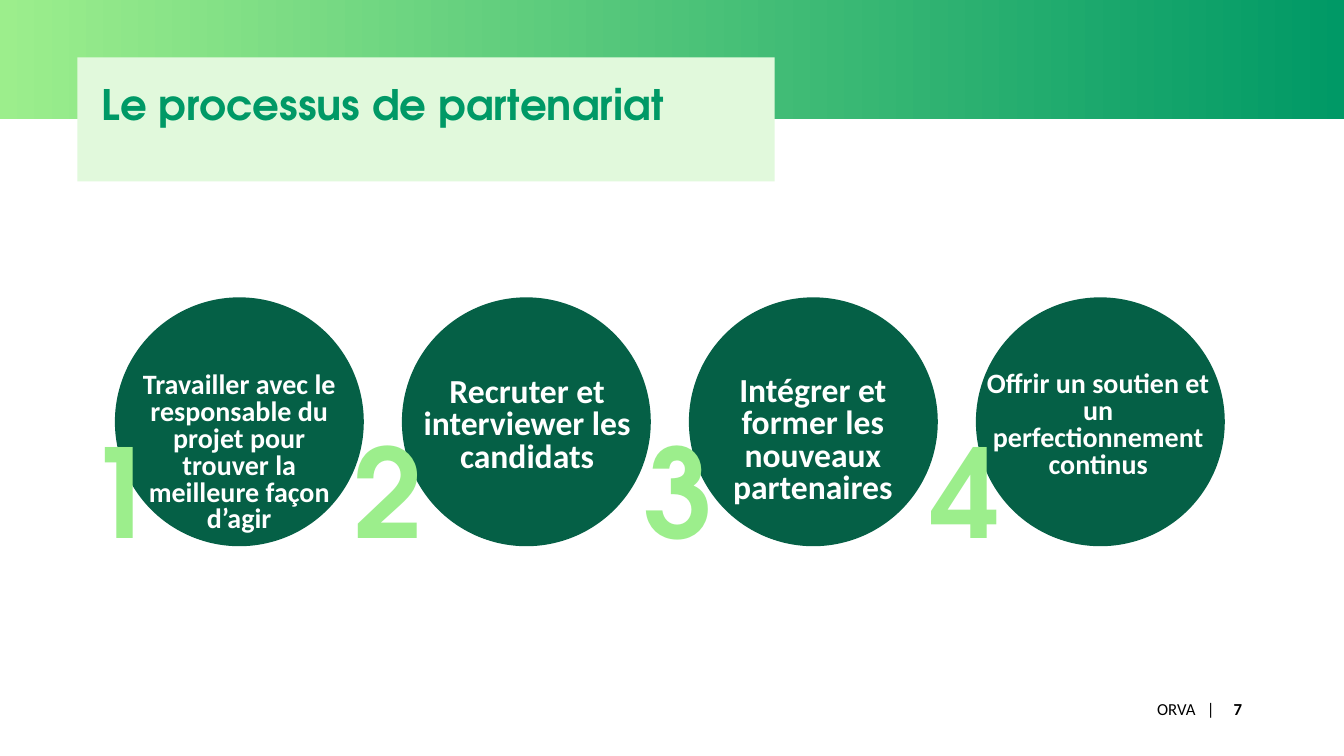
"""Build the slide showing the four steps of the partnership process."""
from pptx import Presentation
from pptx.dml.color import RGBColor
from pptx.enum import shapes, text
from pptx.util import Pt

TITLE = "Le processus de partenariat"
FOOTER = "ORVA   |"
PAGE = "7"
HEADING_FONT, BODY_FONT = "TeX Gyre Adventor", "Calibri"
GREEN, LIME, PALE, DARK = "009966", "9CEE8C", "E1F9DC", "056046"
WHITE, BLACK = "FFFFFF", "000000"

# label, size, number offset, label offset, label top, label width, label height
STEPS = [
    ("Travailler avec le responsable du projet pour trouver la meilleure façon d’agir",
     20, -27.4, 7.1, 262.8, 163.4, 123.8),
    ("Recruter et interviewer les candidats",
     24, -41.7, 0.1, 266.4, 178.6, 77),
    ("Intégrer et former les nouveaux partenaires",
     24, -39, -0.8, 265.7, 178.6, 100),
    ("Offrir un soutien et un perfectionnement continus",
     20, -39, -2, 262.1, 178.6, 85),
]
SLIDE_WIDTH, SLIDE_HEIGHT = 960, 540
CIRCLE_LEFT, CIRCLE_TOP, CIRCLE_SIZE, CIRCLE_PITCH = 82.1, 212.4, 177.8, 205
NUMBER_TOP, NUMBER_WIDTH, NUMBER_HEIGHT = 293, 82.8, 113.8


def colour(value):
    return RGBColor.from_string(value)


def add_block(slide, kind, box, fill=None):
    block = slide.shapes.add_shape(kind, *map(Pt, box))
    block.shadow.inherit = False
    block.line.fill.background()
    if fill:
        block.fill.solid()
        block.fill.fore_color.rgb = colour(fill)
    return block


def write(holder, words, size, face, ink, bold=True,
          align=text.PP_ALIGN.LEFT, anchor=text.MSO_ANCHOR.TOP, spacing=None):
    frame = holder.text_frame
    frame.word_wrap = True
    frame.auto_size = text.MSO_AUTO_SIZE.NONE
    frame.vertical_anchor = anchor
    paragraph = frame.paragraphs[0]
    paragraph.text = words
    paragraph.alignment = align
    paragraph.line_spacing = spacing
    font = paragraph.font
    font.name, font.size, font.bold = face, Pt(size), bold
    font.color.rgb = colour(ink)


def add_text(slide, box, *args, **options):
    write(slide.shapes.add_textbox(*map(Pt, box)), *args, **options)


def main():
    deck = Presentation()
    deck.slide_width, deck.slide_height = Pt(SLIDE_WIDTH), Pt(SLIDE_HEIGHT)
    slide = deck.slides.add_slide(deck.slide_layouts[5])

    for words, left, width, bold in ((FOOTER, 779, 95.8, False), (PAGE, 863.3, 31, True)):
        add_text(slide, (left, 491.8, width, 28.8), words, 12, BODY_FONT, BLACK, bold,
                 text.PP_ALIGN.RIGHT, text.MSO_ANCHOR.MIDDLE)

    rectangle = shapes.MSO_SHAPE.RECTANGLE
    band = add_block(slide, rectangle, (0, 0, SLIDE_WIDTH, 85))
    band.fill.gradient()
    band.fill.gradient_angle = 180
    for stop, shade in zip(band.fill.gradient_stops, (GREEN, LIME)):
        stop.color.rgb = colour(shade)
    add_block(slide, rectangle, (55.2, 41, 498.2, 88.6), PALE)

    title = slide.shapes.title
    title.left, title.top, title.width, title.height = map(Pt, (65.5, 52.6, 663.8, 44))
    write(title, TITLE, 30, HEADING_FONT, GREEN)
    slide.shapes.element.append(title.element)

    lefts = [CIRCLE_LEFT + i * CIRCLE_PITCH for i in range(len(STEPS))]
    for left in lefts:
        add_block(slide, shapes.MSO_SHAPE.OVAL,
                  (left, CIRCLE_TOP, CIRCLE_SIZE, CIRCLE_SIZE), DARK)
    for number, (left, step) in enumerate(zip(lefts, STEPS), 1):
        label, size, number_offset, label_offset, top, width, height = step
        add_text(slide, (left + number_offset, NUMBER_TOP, NUMBER_WIDTH, NUMBER_HEIGHT),
                 str(number), 88, HEADING_FONT, LIME)
        add_text(slide, (left + label_offset, top, width, height), label, size, BODY_FONT,
                 WHITE, align=text.PP_ALIGN.CENTER, spacing=0.8)

    deck.save("out.pptx")


if __name__ == "__main__":
    main()
